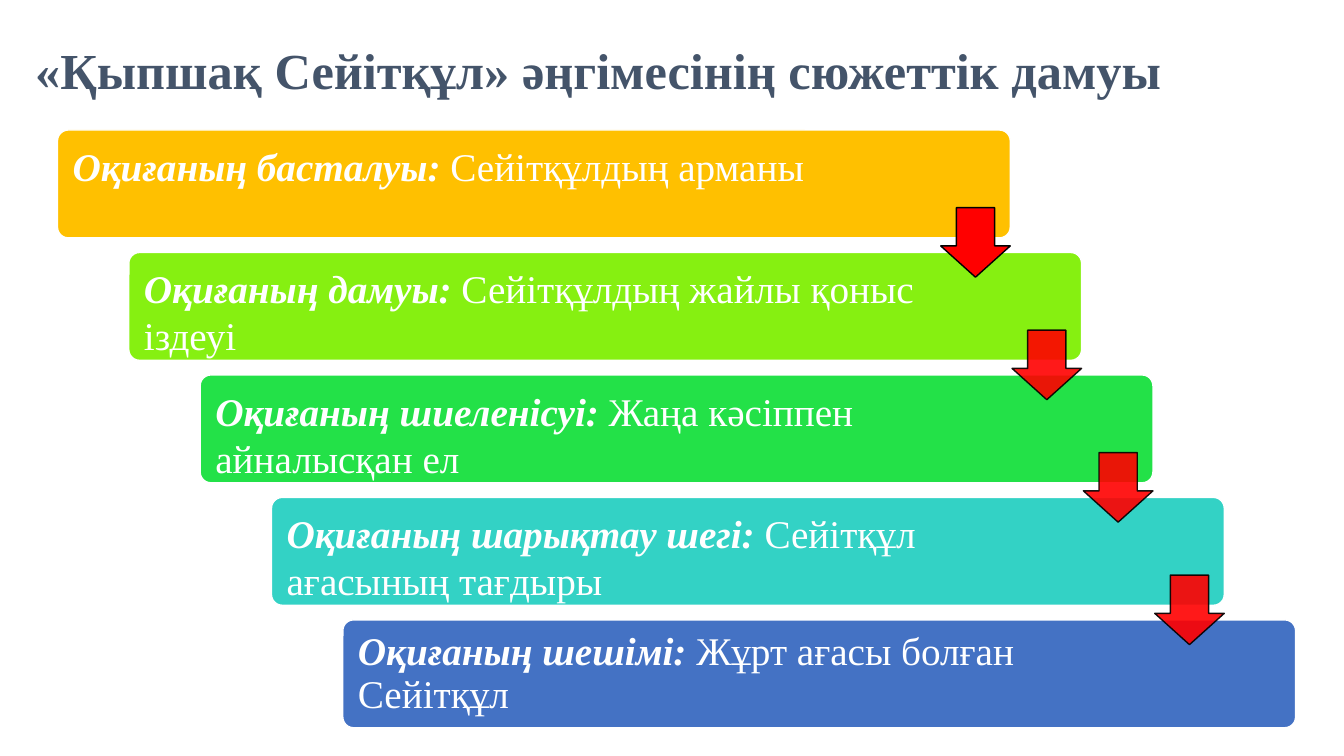
from dataclasses import dataclass

from lxml import etree
from pptx import Presentation
from pptx.dml import color
from pptx.enum import shapes, text
from pptx.oxml import ns
from pptx.util import Inches, Pt

COLORS = {
    "title": "44546A",
    "white": "FFFFFF",
    "black": "000000",
    "arrow": "FF0000",
    "amber": "FFC000",
    "lime": "86F011",
    "green": "23E148",
    "teal": "33D2C5",
    "blue": "4472C4",
}
FONT = "Times New Roman"
FIRST_LEFT, FIRST_TOP = 0.57, 1.29
LAST_LEFT, LAST_TOP = 3.4, 6.15
BAR_WIDTH, BAR_HEIGHT = 9.45, 1.07
ARROW_SIZE, ARROW_DROP = 0.69, 0.77


@dataclass
class Stage:
    label: str
    event: str
    fill: str
    text_width: float = 7.99
    line_spacing: float = 1.0
    arrow_alpha: int = 90


STAGES = [
    Stage("Оқиғаның басталуы: ", "Сейітқұлдың арманы", "amber",
          text_width=8.17, arrow_alpha=100),
    Stage("Оқиғаның дамуы: ", "Сейітқұлдың жайлы қоныс іздеуі", "lime"),
    Stage("Оқиғаның шиеленісуі: ", "Жаңа кәсіппен айналысқан ел", "green"),
    Stage("Оқиғаның шарықтау шегі: ", "Сейітқұл ағасының тағдыры", "teal"),
    Stage("Оқиғаның шешімі: ", "Жұрт ағасы болған Сейітқұл", "blue",
          line_spacing=0.9),
]


def rgb(name: str) -> color.RGBColor:
    return color.RGBColor.from_string(COLORS[name])


def add_block(slide, kind, left: float, top: float, width: float,
              height: float, adjustments: list[float], fill: str, line: str):
    """Add a flat preset shape with a 1 pt outline."""
    sp = slide.shapes.add_shape(kind, Inches(left), Inches(top),
                                Inches(width), Inches(height))
    for i, value in enumerate(adjustments):
        sp.adjustments[i] = value
    sp.shadow.inherit = False
    sp.fill.solid()
    sp.fill.fore_color.rgb = rgb(fill)
    sp.line.color.rgb = rgb(line)
    sp.line.width = Pt(1)
    return sp


def set_alpha(sp, percent: int) -> None:
    """Make the fill and outline partly transparent."""
    for clr in sp._element.spPr.iter(ns.qn("a:srgbClr")):
        etree.SubElement(clr, ns.qn("a:alpha"), val=str(percent * 1000))


def style_font(font, size: int, name: str) -> None:
    font.name = FONT
    font.size = Pt(size)
    font.color.rgb = rgb(name)


def add_title(slide, title: str) -> None:
    sp = slide.shapes.add_textbox(Inches(0.25), Inches(0.34),
                                  Inches(12.15), Inches(0.71))
    tf = sp.text_frame
    tf.word_wrap = True
    p = tf.paragraphs[0]
    p.text = title
    style_font(p.font, 36, "title")
    p.font.bold = True


def add_stage(slide, stage: Stage, left: float, top: float) -> None:
    add_block(slide, shapes.MSO_SHAPE.ROUNDED_RECTANGLE, left, top,
              BAR_WIDTH, BAR_HEIGHT, [0.1], stage.fill, "white")
    sp = slide.shapes.add_textbox(Inches(left + 0.03), Inches(top + 0.03),
                                  Inches(stage.text_width), Inches(1))
    tf = sp.text_frame
    tf.word_wrap = True
    tf.vertical_anchor = text.MSO_ANCHOR.TOP
    tf.margin_left = tf.margin_right = Inches(0.12)
    tf.margin_top, tf.margin_bottom = Inches(0.09), 0
    p = tf.paragraphs[0]
    p.line_spacing = stage.line_spacing
    style_font(p.font, 28, "white")
    label = p.add_run()
    label.text = stage.label
    label.font.bold = label.font.italic = True
    p.add_run().text = stage.event


def add_arrow(slide, stage: Stage, left: float, top: float) -> None:
    """Add the arrow leading from a stage's bar to the next one."""
    sp = add_block(slide, shapes.MSO_SHAPE.DOWN_ARROW,
                   left + BAR_WIDTH - ARROW_SIZE, top + ARROW_DROP,
                   ARROW_SIZE, ARROW_SIZE, [0.55, 0.45], "arrow", "black")
    if stage.arrow_alpha < 100:
        set_alpha(sp, stage.arrow_alpha)


def main() -> None:
    prs = Presentation()
    prs.slide_width, prs.slide_height = Inches(13.33), Inches(7.5)
    slide = prs.slides.add_slide(prs.slide_layouts[6])
    add_title(slide, "«Қыпшақ Сейітқұл» әңгімесінің сюжеттік дамуы")

    steps = len(STAGES) - 1
    corners = [(FIRST_LEFT + (LAST_LEFT - FIRST_LEFT) * i / steps,
                FIRST_TOP + (LAST_TOP - FIRST_TOP) * i / steps)
               for i in range(len(STAGES))]
    for stage, (left, top) in zip(STAGES, corners):
        add_stage(slide, stage, left, top)
    for stage, (left, top) in zip(STAGES[:-1], corners):
        add_arrow(slide, stage, left, top)
    prs.save("out.pptx")


if __name__ == "__main__":
    main()
